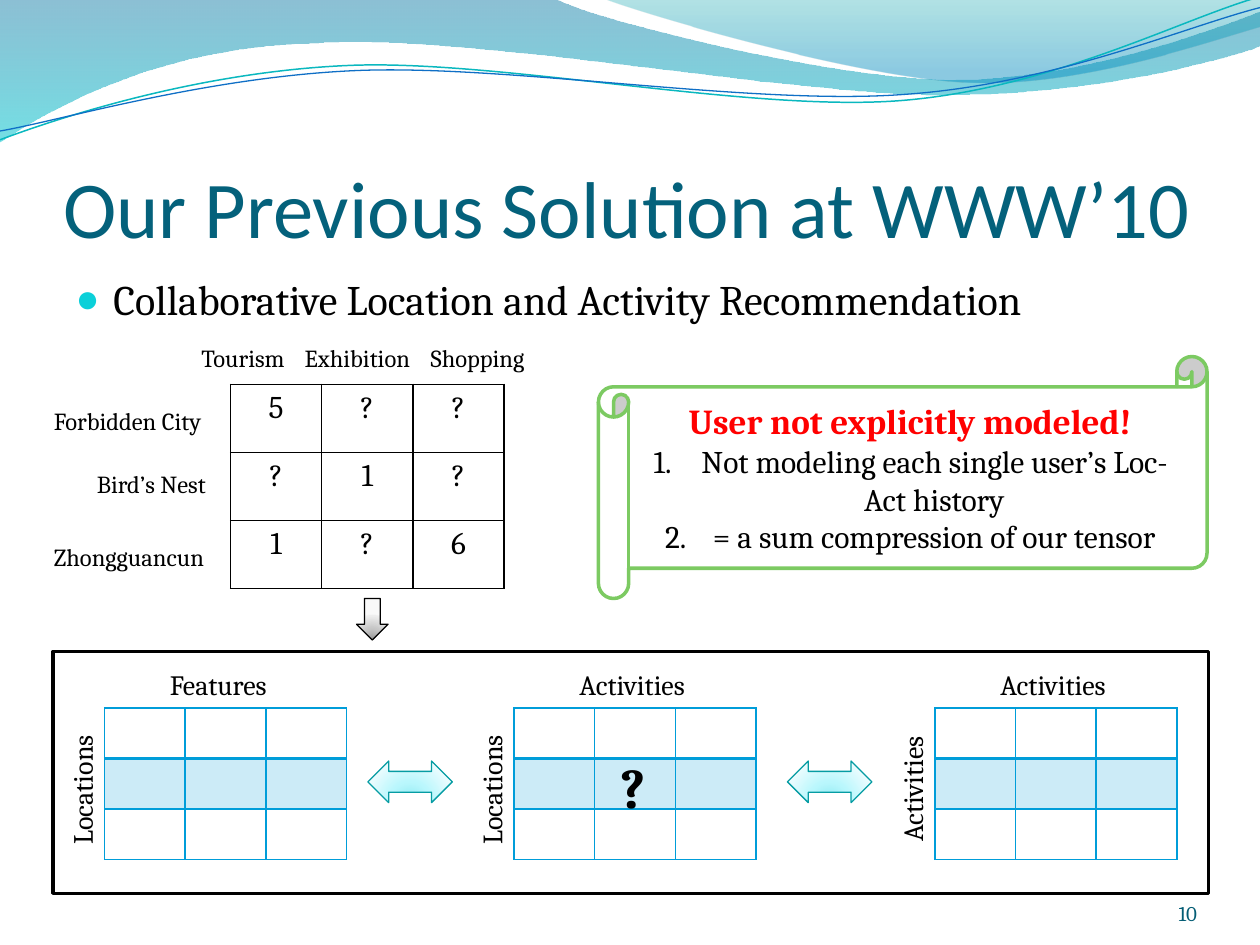
from math import cos, radians, sin

from lxml.etree import SubElement
from pptx import Presentation
from pptx.dml.color import RGBColor
from pptx.enum.shapes import MSO_SHAPE
from pptx.enum.text import MSO_ANCHOR, MSO_AUTO_SIZE, PP_ALIGN
from pptx.oxml import parse_xml
from pptx.oxml.ns import nsdecls, qn
from pptx.util import Inches, Pt

TITLE = "Our Previous Solution at WWW’10"
BULLET = "Collaborative Location and Activity Recommendation"
RATINGS = [["5", "?", "?"], ["?", "1", "?"], ["1", "?", "6"]]
RATING_LABELS = [  # text, left, top, width
    ("Forbidden City", 0.33, 3.17, 1.47), ("Tourism", 1.5, 2.67, 0.91),
    ("Exhibition", 2.32, 2.67, 1.09), ("Shopping", 3.32, 2.67, 1.01),
    ("Bird’s Nest", 0.67, 3.67, 1.11), ("Zhongguancun", 0.33, 4.25, 1.49),
]
MATRICES = [  # column label, row label, left, row height
    ("Features", "Locations", 0.83, 0.39),
    ("Activities", "Locations", 4.08, 0.4),
    ("Activities", "Activities", 7.42, 0.4),
]
LABEL_WIDTHS = {"Features": 1.02, "Locations": 1.15, "Activities": 1.11}
SCROLL_HEADING = "User not explicitly modeled!"
SCROLL_ITEMS = ["Not modeling each single user’s Loc-Act history",
                "= a sum compression of our tensor"]

# Each wave: box, then a start point, straight points (x, y) and
# Bezier segments (x1, y1, x2, y2, x, y)
WAVE_FILLS = [
    ((-0.01, -0.01, 10.02, 1.14),
     [(0, 0), (4.4, -0.01), (4.76, 0.17, 6.64, 0.63, 7.58, 0.63),
      (8.53, 0.63, 9.58, 0.26, 10, 0.09), (10.01, 0.36),
      (9.83, 0.44, 8.7, 0.76, 7.46, 0.75), (6.22, 0.75, 3.82, 0.28, 2.57, 0.34),
      (1.29, 0.36, 0.46, 0.83, -0.01, 1.13), (0, 0)],
     [(0, "0074A1", 45), (100, "00C6CF", 55)]),
    ((4.79, -0.01, 5.21, 0.7),
     [(4.79, -0.01), (5.09, 0.11, 6.82, 0.62, 7.69, 0.65),
      (8.56, 0.69, 9.61, 0.32, 10, 0.21), (10, 0), (4.79, -0.01)],
     [(0, "00A1A9", 30), (80, "008BBF", 45)]),
]
WAVE_LINES = [
    ((-0.02, 0.22, 10.02, 0.71),
     [(0, 1.11), (0.48, 0.93, 1.58, 0.57, 2.77, 0.52),
      (3.95, 0.47, 5.93, 0.89, 7.13, 0.8), (8.33, 0.71, 9.38, 0.15, 9.98, -0.02)],
     "0AB8BF", 0.85),
    ((-0.02, 0.3, 10.03, 0.58),
     [(0, 1.04), (0.47, 0.96, 1.64, 0.61, 2.83, 0.56),
      (4.03, 0.51, 5.97, 0.84, 7.17, 0.75), (8.36, 0.67, 9.41, 0.21, 10, 0.06)],
     "0F6FC6", 0.75),
]
WAVE_TILT = -2.7
AQUA = [(0, "8BE9F1", 100), (43, "B9F7FD", 100), (93, "EAFCFE", 100), (100, "F8FEFF", 100)]
GREY = [(0, "979797", 100), (43, "C6C6C6", 100), (93, "EEEEEE", 100), (100, "F9F9F9", 100)]
LINEAR = '<a:lin ang="5400000" scaled="0"/>'
RADIAL = ('<a:path path="circle"><a:fillToRect l="50000" t="130000" r="50000" '
          'b="-30000"/></a:path>')

prs = Presentation()
prs.slide_width, prs.slide_height = Inches(10), Inches(7.5)
slide = prs.slides.add_slide(prs.slide_layouts[1])
shapes = slide.shapes


def color(code):
    return RGBColor.from_string(code)


def write(paragraph, text, size=18, code="000000", font="Cambria", bold=False, align=PP_ALIGN.LEFT):
    paragraph.alignment = align
    run = paragraph.add_run()
    run.text = text
    run.font.size, run.font.name, run.font.bold = Pt(size), font, bold
    run.font.color.rgb = color(code)


def place(shape, left, top, width, height):
    shape.left, shape.top = Inches(left), Inches(top)
    shape.width, shape.height = Inches(width), Inches(height)


def label(text, left, top, width, height, rotation=0, **style):
    box = shapes.add_textbox(*map(Inches, (left, top, width, height)))
    box.rotation = rotation
    box.text_frame.word_wrap = False
    write(box.text_frame.paragraphs[0], text, **style)
    return box


def outline(shape, code, width):
    shape.shadow.inherit = False
    shape.line.color.rgb = color(code)
    shape.line.width = Pt(width)


def gradient(shape, stops, direction):
    shape.fill.background()
    stop_xml = "".join(
        f'<a:gs pos="{pos * 1000}"><a:srgbClr val="{code}">'
        f'<a:alpha val="{alpha * 1000}"/></a:srgbClr></a:gs>' for pos, code, alpha in stops)
    properties = shape._element.spPr
    properties.replace(properties.find(qn("a:noFill")), parse_xml(
        f'<a:gradFill {nsdecls("a")} rotWithShape="1"><a:gsLst>{stop_xml}</a:gsLst>'
        f'{direction}</a:gradFill>'))


def wave(box, segments, tilt=0):
    """Build a freeform over box and give it curved segments, undoing the tilt in its path."""
    left, top, width, height = box
    corners = [(left + width, top), (left + width, top + height)]
    builder = shapes.build_freeform(Inches(left), Inches(top))
    builder.add_line_segments([tuple(map(Inches, corner)) for corner in corners], close=False)
    shape = builder.convert_to_shape()
    shape.rotation = tilt
    outline_path = shape._element.spPr.find(".//" + qn("a:path"))
    for child in list(outline_path):
        outline_path.remove(child)
    c, s = cos(radians(tilt)), sin(radians(tilt))
    for index, segment in enumerate(segments):
        tag = "moveTo" if index == 0 else "lnTo" if len(segment) == 2 else "cubicBezTo"
        step = SubElement(outline_path, qn("a:" + tag))
        for x, y in zip(segment[::2], segment[1::2]):
            dx, dy = x - left - width / 2, y - top - height / 2
            point = SubElement(step, qn("a:pt"))
            point.set("x", str(Inches(width / 2 + dx * c + dy * s)))
            point.set("y", str(Inches(height / 2 - dx * s + dy * c)))
    if segments[0] == segments[-1]:
        SubElement(outline_path, qn("a:close"))
    return shape


def block_arrow(kind, left, top, width, height, stops, line):
    arrow = shapes.add_shape(kind, *map(Inches, (left, top, width, height)))
    outline(arrow, line, 0.75)
    gradient(arrow, stops, RADIAL)


def grid(left, top, width, row, line, contents=None, band=None):
    """Add a 3 by 3 table; band is the tint of the middle row."""
    table = shapes.add_table(3, 3, *map(Inches, (left, top, width, 3 * row))).table
    table.first_row = table.horz_banding = False
    for i in range(3):
        table.columns[i].width, table.rows[i].height = Inches(width / 3), Inches(row)
        for j in range(3):
            cell = table.cell(i, j)
            for side in "LRTB":
                heavy = band and (i, side) in ((0, "B"), (1, "T"))
                cell._tc.get_or_add_tcPr().append(parse_xml(
                    f'<a:ln{side} {nsdecls("a")} w="{Pt(2 if heavy else 1)}"><a:solidFill>'
                    f'<a:srgbClr val="{line}"/></a:solidFill></a:ln{side}>'))
            if band and i == 1:
                cell.fill.solid()
                cell.fill.fore_color.rgb = color(band)
                tint = cell._tc.tcPr.find(qn("a:solidFill")).find(qn("a:srgbClr"))
                SubElement(tint, qn("a:alpha")).set("val", "20000")
            else:
                cell.fill.background()
            if contents:
                write(cell.text_frame.paragraphs[0], contents[i][j], align=PP_ALIGN.CENTER)


def indent(paragraph, hang):
    properties = paragraph._p.get_or_add_pPr()
    properties.set("marL", str(Inches(hang)))
    properties.set("indent", str(-Inches(hang)))
    return properties


# Decorative waves
for box, segments, stops in WAVE_FILLS:
    area = wave(box, segments)
    area.shadow.inherit = False
    area.line.fill.background()
    gradient(area, stops, LINEAR)
for box, segments, code, width in WAVE_LINES:
    strand = wave(box, segments, WAVE_TILT)
    strand.fill.background()
    outline(strand, code, width)

# Title, bullet and page number
title, body = shapes.title, slide.placeholders[1]
for placeholder in (title, body):
    shapes._spTree.append(placeholder._element)  # in front of the waves
place(title, 0.5, 0.77, 9, 1.25)
frame = title.text_frame
frame.auto_size, frame.vertical_anchor = MSO_AUTO_SIZE.NONE, MSO_ANCHOR.BOTTOM
frame.margin_left = frame.margin_right = frame.margin_bottom = 0
write(frame.paragraphs[0], TITLE, size=46, code="04617B", font="Calibri")
place(body, 0.5, 2.12, 9, 4.8)
body.text_frame.auto_size = MSO_AUTO_SIZE.NONE
bullet = body.text_frame.paragraphs[0]
write(bullet, BULLET, size=24)
bullet.space_before = Pt(4.3)
bullet_format = indent(bullet, 0.3)
SubElement(SubElement(bullet_format, qn("a:buClr")), qn("a:srgbClr")).set("val", "0BD0D9")
SubElement(bullet_format, qn("a:buSzPct")).set("val", "95000")
SubElement(bullet_format, qn("a:buChar")).set("char", "●")
page = label("10", 8.67, 6.95, 0.83, 0.4, size=12, code="045D75", align=PP_ALIGN.RIGHT)
frame = page.text_frame
frame.word_wrap, frame.vertical_anchor = True, MSO_ANCHOR.BOTTOM
frame.margin_left = frame.margin_right = frame.margin_top = frame.margin_bottom = 0

# Three linked matrices
for column_label, row_label, left, row in MATRICES:
    grid(left, 5.62, 1.92, row, "009DD9", band="009DD9")
    label(column_label, left + 0.42, 5.25, LABEL_WIDTHS[column_label], 0.37, size=16)
    width = LABEL_WIDTHS[row_label]
    label(row_label, left - 0.18 - width / 2, 6.04, width, 0.37, rotation=270, size=16)
for left in (2.92, 6.25):
    block_arrow(MSO_SHAPE.LEFT_RIGHT_ARROW, left, 6.04, 0.67, 0.33, AQUA, "069CA3")

# Location by activity ratings
grid(1.83, 3.05, 2.17, 0.54, "000000", contents=RATINGS)
for text, left, top, width in RATING_LABELS:
    label(text, left, top, width, 0.34, size=14)
label("?", 4.83, 5.92, 0.41, 0.64, size=32, bold=True)

border = shapes.add_shape(MSO_SHAPE.RECTANGLE, *map(Inches, (0.42, 5.17, 9.17, 1.92)))
border.fill.background()
outline(border, "000000", 2)
block_arrow(MSO_SHAPE.DOWN_ARROW, 2.83, 4.75, 0.25, 0.33, GREY, "000000")

# Scroll with the limitations
scroll = shapes.add_shape(MSO_SHAPE.HORIZONTAL_SCROLL, *map(Inches, (4.75, 2.83, 4.83, 1.92)))
scroll.fill.solid()
scroll.fill.fore_color.rgb = color("FFFFFF")
outline(scroll, "7CCA62", 2)
frame = scroll.text_frame
frame.word_wrap, frame.vertical_anchor = True, MSO_ANCHOR.MIDDLE
heading = frame.paragraphs[0]
write(heading, SCROLL_HEADING, size=20, code="FF0000", bold=True, align=PP_ALIGN.CENTER)
indent(heading, 0.38)
for text in SCROLL_ITEMS:
    item = frame.add_paragraph()
    write(item, text, align=PP_ALIGN.CENTER)
    SubElement(indent(item, 0.38), qn("a:buAutoNum")).set("type", "arabicPeriod")

prs.save("out.pptx")
